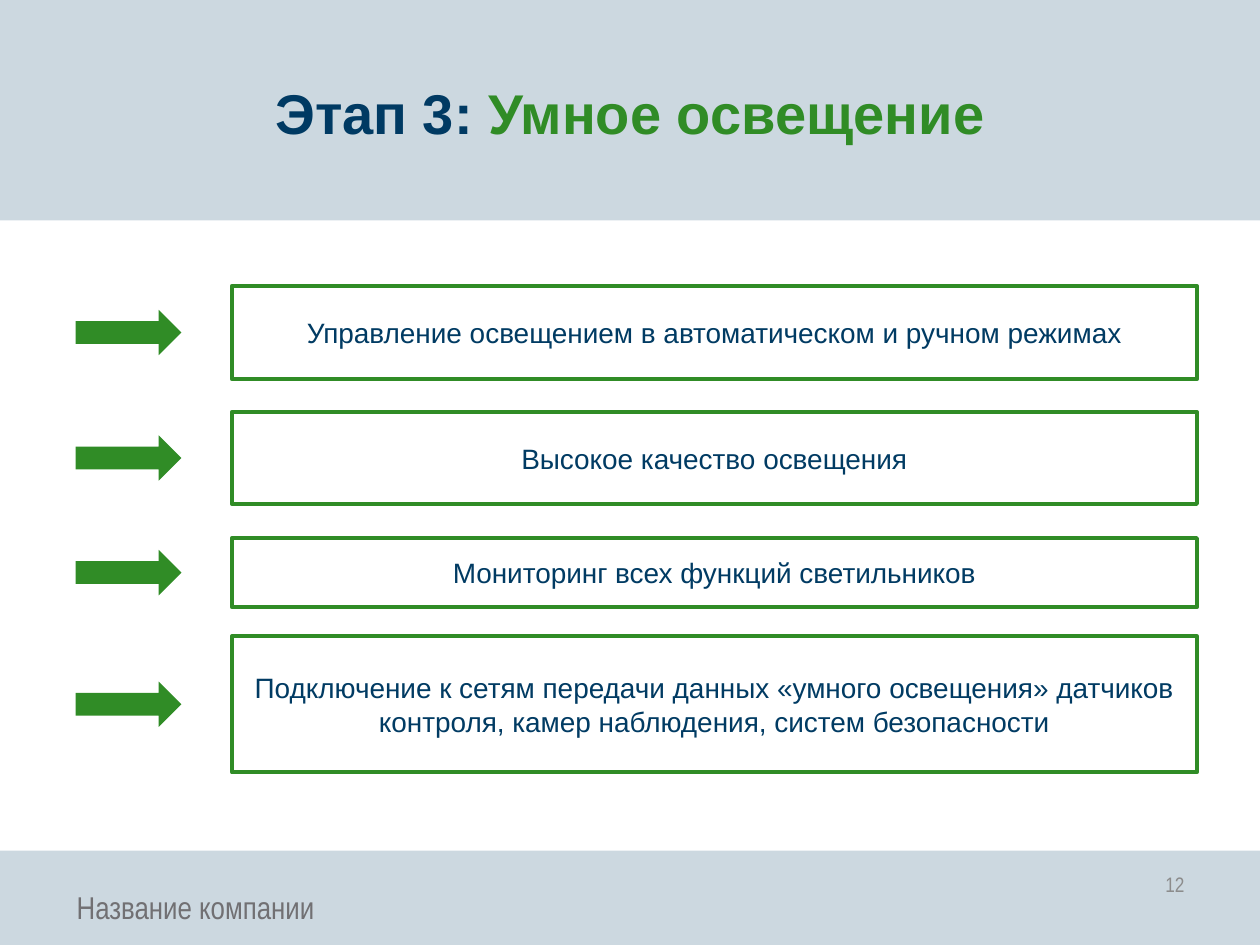
"""Build the smart lighting stage slide."""
from dataclasses import dataclass

from pptx import Presentation
from pptx import util as u
from pptx.dml.color import RGBColor
from pptx.enum import shapes, text

NAVY, GREEN, BAND, WHITE = "003A63", "308C26", "CCD8E0", "FFFFFF"
BOX_TEXT, FOOTER_GREY, NUMBER_GREY = "013B63", "717073", "8C8C8C"
ARROW_HEIGHT = 0.36


@dataclass(frozen=True)
class Benefit:
    """A framed statement and the arrow centred beside it."""
    wording: str
    top: float
    height: float


BENEFITS = [
    Benefit("Управление освещением в автоматическом и ручном режимах", 2.27, 0.74),
    Benefit("Высокое качество освещения", 3.27, 0.73),
    Benefit("Мониторинг всех функций светильников", 4.27, 0.55),
    Benefit("Подключение к сетям передачи данных «умного освещения» датчиков "
            "контроля, камер наблюдения, систем безопасности", 5.05, 1.08),
]


def color(value: str) -> RGBColor:
    """Turn a hex string into a colour."""
    return RGBColor.from_string(value)


def place(shape, left: float, top: float, width: float, height: float) -> None:
    """Set position and size in inches."""
    frame = {"left": left, "top": top, "width": width, "height": height}
    for name, value in frame.items():
        setattr(shape, name, u.Inches(value))


def write(shape, runs: list[tuple[str, str]], size: int, font: str = "Arial",
          align=text.PP_ALIGN.CENTER, anchor=text.MSO_ANCHOR.MIDDLE,
          bold: bool = False) -> None:
    """Fill a shape with one paragraph of coloured runs."""
    frame = shape.text_frame
    frame_format = {"word_wrap": True, "vertical_anchor": anchor,
                    "auto_size": text.MSO_AUTO_SIZE.NONE}
    for name, value in frame_format.items():
        setattr(frame, name, value)
    paragraph = frame.paragraphs[0]
    paragraph.alignment = align
    run_format = {"size": u.Pt(size), "name": font, "bold": bold}
    for wording, run_color in runs:
        run = paragraph.add_run()
        run.text = wording
        for name, value in run_format.items():
            setattr(run.font, name, value)
        run.font.color.rgb = color(run_color)


def add_shape(slide, kind, frame: tuple, fill: str, line: str | None = None):
    """Add a flat preset shape with an optional outline."""
    shape = slide.shapes.add_shape(kind, *map(u.Inches, frame))
    shape.shadow.inherit = False
    shape.fill.solid()
    shape.fill.fore_color.rgb = color(fill)
    if line:
        shape.line.color.rgb = color(line)
        shape.line.width = u.Pt(2.25)
    else:
        shape.line.fill.background()
    return shape


def add_benefit(slide, benefit: Benefit) -> None:
    """Draw a framed statement and its arrow."""
    box = add_shape(slide, shapes.MSO_SHAPE.RECTANGLE,
                    (1.84, benefit.top, 7.66, benefit.height), WHITE, GREEN)
    write(box, [(benefit.wording, BOX_TEXT)], 16)
    arrow_top = benefit.top + (benefit.height - ARROW_HEIGHT) / 2
    add_shape(slide, shapes.MSO_SHAPE.RIGHT_ARROW,
              (0.6, arrow_top, 0.84, ARROW_HEIGHT), GREEN)


def main() -> None:
    """Build and save the slide."""
    presentation = Presentation()
    presentation.slide_width = u.Inches(10)
    presentation.slide_height = u.Inches(7.5)
    slide = presentation.slides.add_slide(presentation.slide_layouts[5])

    for top, height in ((6.75, 0.75), (0, 1.75)):
        add_shape(slide, shapes.MSO_SHAPE.RECTANGLE, (0, top, 10, height), BAND)

    title = slide.shapes.title
    title.element.getparent().append(title.element)
    place(title, 1.18, 0.57, 7.64, 0.64)
    write(title, [("Этап 3: ", NAVY), ("Умное освещение", GREEN)], 32,
          anchor=text.MSO_ANCHOR.TOP, bold=True)

    footer = slide.shapes.add_textbox(*map(u.Inches, (0.51, 7, 4.49, 0.34)))
    write(footer, [("Название компании", FOOTER_GREY)], 18, "Arial Narrow",
          text.PP_ALIGN.LEFT, text.MSO_ANCHOR.TOP)
    number = slide.shapes.add_textbox(*map(u.Inches, (7.17, 6.82, 2.33, 0.4)))
    write(number, [("12", NUMBER_GREY)], 12, "Arial Narrow", text.PP_ALIGN.RIGHT)

    for benefit in BENEFITS:
        add_benefit(slide, benefit)
    presentation.save("out.pptx")


if __name__ == "__main__":
    main()
